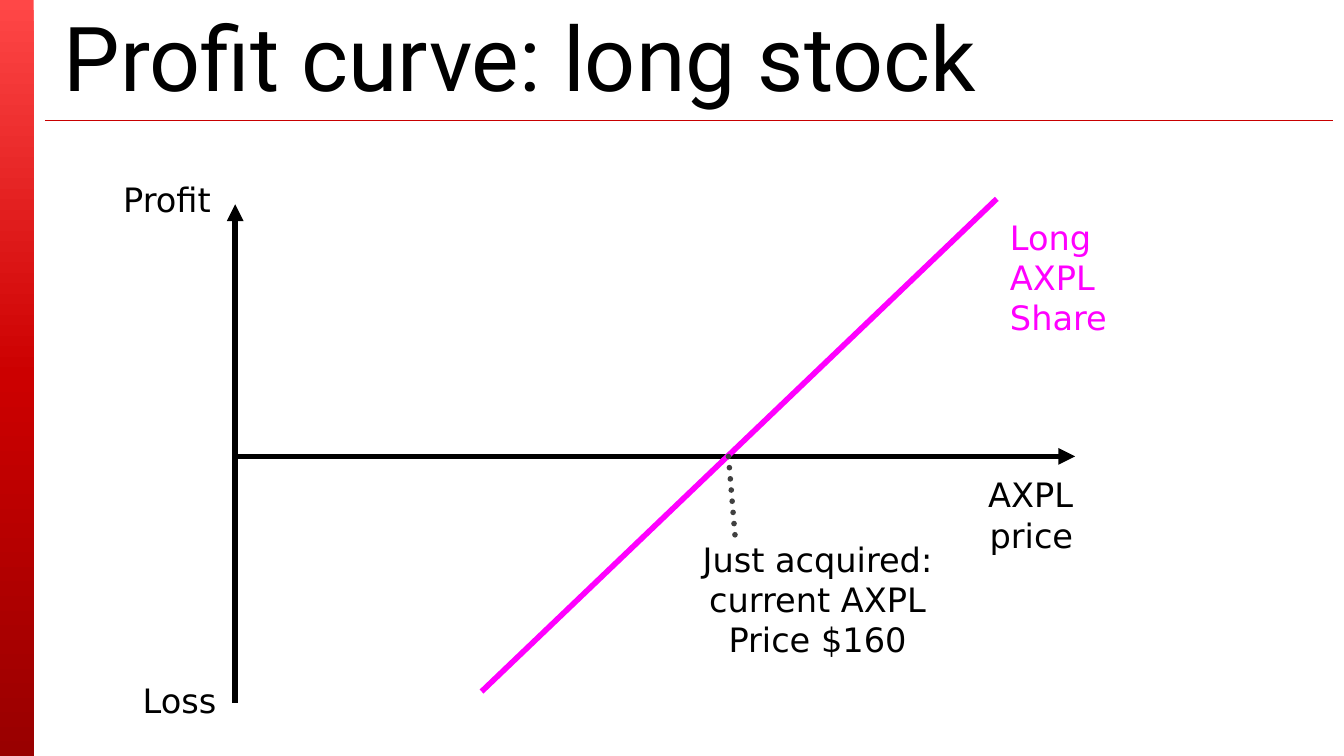
from copy import deepcopy
from dataclasses import dataclass

from pptx import Presentation
from pptx.dml.color import RGBColor
from pptx.enum.dml import MSO_LINE
from pptx.enum.shapes import MSO_CONNECTOR, MSO_SHAPE
from pptx.enum.text import MSO_ANCHOR, PP_ALIGN
from pptx.oxml.ns import qn
from pptx.util import Pt
from lxml.etree import SubElement

PX = 9525  # EMU per px, 96 px to the inch
WIDTH, HEIGHT = 960, 540


@dataclass(frozen=True)
class Theme:
    ink: str = "000000"
    profit: str = "FF00FF"
    guide: str = "404040"
    rule: str = "C80000"
    sidebar: tuple = ((0, "FF4747"), (0.5, "CC0000"), (1, "990000"))
    title_font: str = "Roboto"
    label_font: str = "DejaVu Sans"
    title_size: int = 48
    label_size: int = 18
    rule_width: float = 0.75
    graph_width: float = 3


THEME = Theme()


def rgb(value):
    return RGBColor.from_string(value)


def emu(*lengths):
    return [length * PX for length in lengths]


def add_sidebar(shapes, box):
    sidebar = shapes.add_shape(MSO_SHAPE.RECTANGLE, *emu(*box))
    sidebar.shadow.inherit = False
    sidebar.line.fill.background()
    sidebar.fill.gradient()
    sidebar.fill.gradient_angle = 270  # top to bottom
    # The default gradient has two stops; this one needs a third
    stops = sidebar._element.spPr.find(".//" + qn("a:gsLst"))
    stops.insert(1, deepcopy(stops[0]))
    for stop, (position, color) in zip(sidebar.fill.gradient_stops, THEME.sidebar):
        stop.position = position
        stop.color.rgb = rgb(color)


def add_line(shapes, start, end, color, width=THEME.graph_width, arrow=False, dotted=False):
    line = shapes.add_connector(MSO_CONNECTOR.STRAIGHT, *emu(*start, *end))
    line.line.color.rgb = rgb(color)
    line.line.width = Pt(width)
    outline = line.line._get_or_add_ln()
    if dotted:
        line.line.dash_style = MSO_LINE.ROUND_DOT
        outline.set("cap", "rnd")
    if arrow:
        SubElement(outline, qn("a:tailEnd"), type="triangle")
    SubElement(line._element.spPr, qn("a:effectLst"))


def add_text(shapes, text, box, align=PP_ALIGN.LEFT, color=THEME.ink,
             font=THEME.label_font, size=THEME.label_size, anchor=MSO_ANCHOR.TOP):
    frame = shapes.add_textbox(*emu(*box)).text_frame
    frame.word_wrap = True
    frame.vertical_anchor = anchor
    frame.text = text
    paragraph = frame.paragraphs[0]
    paragraph.alignment = align
    for run in paragraph.runs:
        run.font.name = font
        run.font.size = Pt(size)
        run.font.color.rgb = rgb(color)


def add_profit_graph(shapes):
    axis_x, axis_y = 168, 326

    # Axes
    add_line(shapes, (axis_x, 502), (axis_x, 146), THEME.ink, arrow=True)
    add_line(shapes, (axis_x, axis_y), (768, axis_y), THEME.ink, arrow=True)
    add_text(shapes, "AXPL price", (672, 334, 104, 68), PP_ALIGN.RIGHT)

    # Profit curve
    add_line(shapes, (344, 494), (712, 142), THEME.profit)
    add_text(shapes, "Long AXPL Share", (712, 150, 144, 97), color=THEME.profit)

    # Break-even point
    add_line(shapes, (525, 382), (520, 322), THEME.guide, dotted=True)
    add_text(shapes, "Just acquired: current AXPL Price $160",
             (480, 380, 208, 97), PP_ALIGN.CENTER)


def main():
    deck = Presentation()
    deck.slide_width, deck.slide_height = emu(WIDTH, HEIGHT)
    shapes = deck.slides.add_slide(deck.slide_layouts[6]).shapes

    # Frame and title
    add_sidebar(shapes, (0, 0, 24, HEIGHT))
    add_line(shapes, (32, 86), (952, 86), THEME.rule, THEME.rule_width)
    add_text(shapes, "Profit curve: long stock", (36, 14, 920, 51),
             font=THEME.title_font, size=THEME.title_size, anchor=MSO_ANCHOR.MIDDLE)

    # Graph with the ends of its vertical axis named
    add_profit_graph(shapes.add_group_shape().shapes)
    add_text(shapes, "Profit", (48, 123, 112, 38), PP_ALIGN.RIGHT)
    add_text(shapes, "Loss", (52, 481, 112, 38), PP_ALIGN.RIGHT)

    deck.save("out.pptx")


if __name__ == "__main__":
    main()
